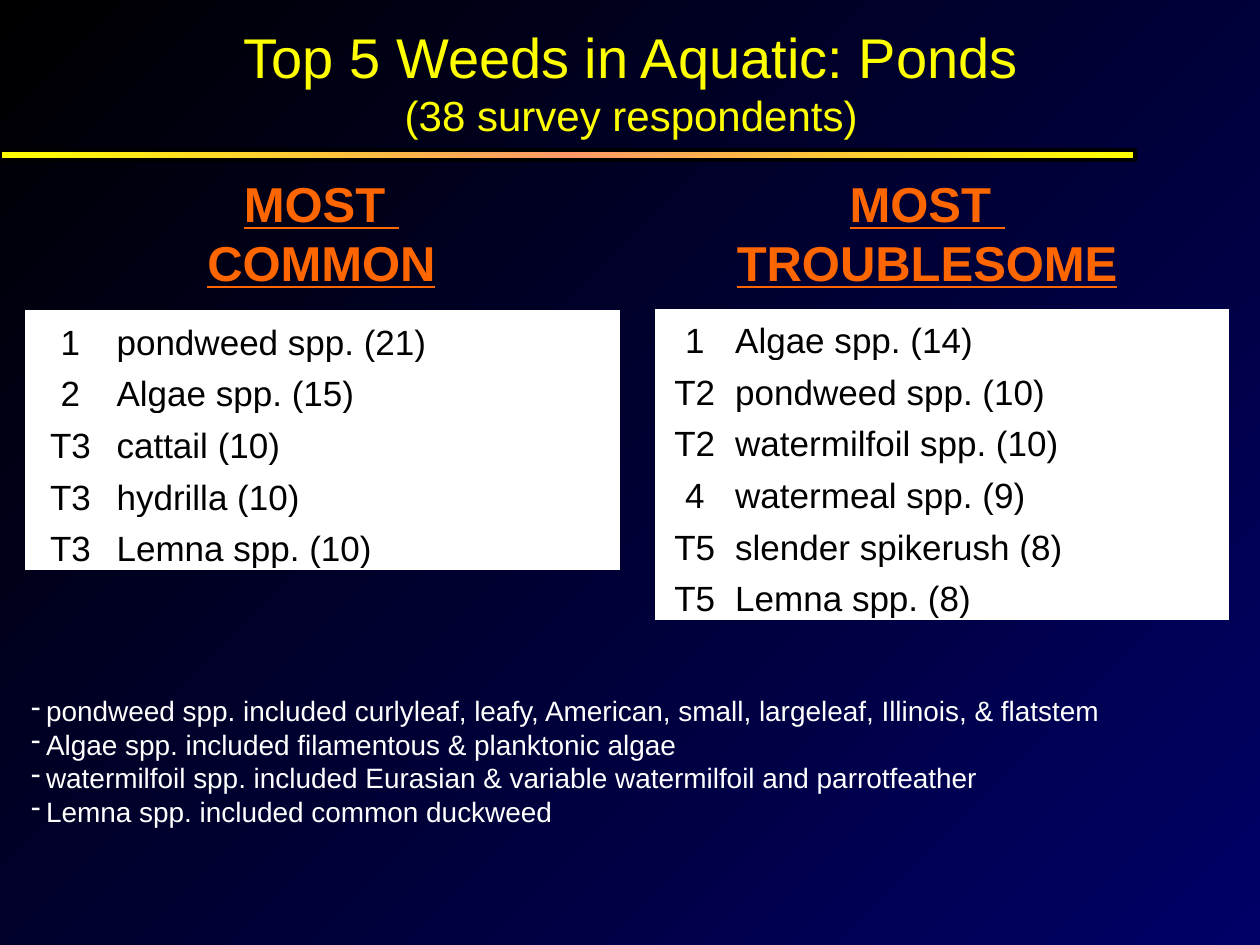
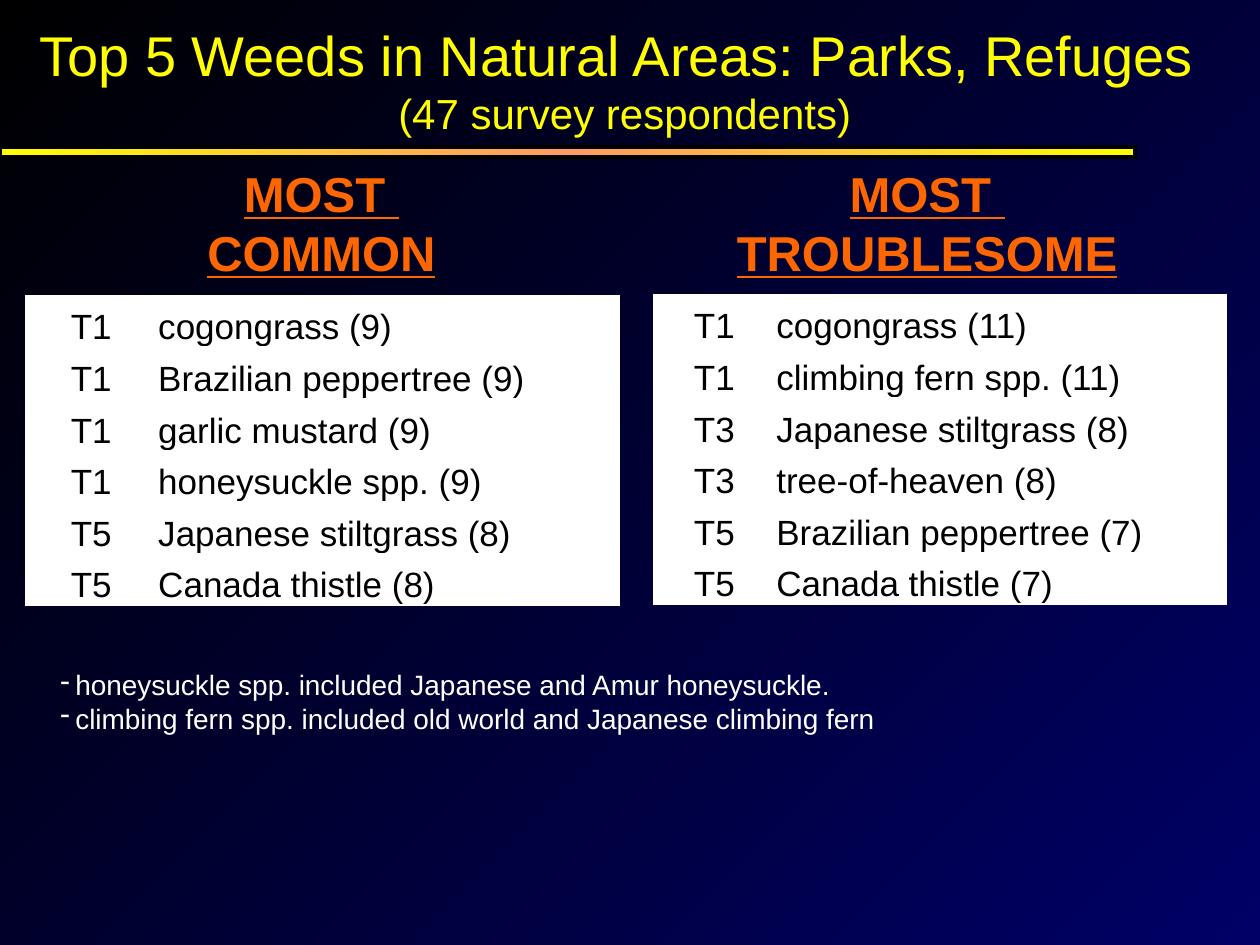
from copy import deepcopy
from lxml.etree import SubElement as Sub
from pptx import Presentation
from pptx.dml.color import RGBColor as RGB
from pptx.enum.shapes import MSO_SHAPE as SHAPE
from pptx.enum.text import MSO_ANCHOR as ANCHOR, PP_ALIGN as ALIGN
from pptx.oxml.ns import qn
from pptx.util import Cm, Pt

INK = {"night": "000000", "navy": "000066", "title": "FFFF00", "glow": "FF9966",
       "head": "FF6600", "paper": "FFFFFF", "text": "000000"}
FONT = "Arial"
ROW = 1.04


def tint(name):
    return RGB.from_string(INK[name])


def style(para, size, color, bold=False, line=False):
    for run in para.runs:
        font = run.font
        font.name, font.size = FONT, Pt(size)
        font.color.rgb = tint(color)
        font.bold, font.underline = bold, line


def blend(fill, node, angle, names):
    """Spread the named colours evenly along a linear gradient."""
    fill.gradient()
    fill.gradient_angle = angle
    stops = node.find(".//" + qn("a:gsLst"))
    while len(stops) < len(names):
        stops.append(deepcopy(stops[0]))
    for i, (stop, name) in enumerate(zip(fill.gradient_stops, names)):
        stop.color.rgb = tint(name)
        stop.position = i / (len(names) - 1)


def write(slide, box, lines, wrap=True):
    frame = slide.shapes.add_textbox(*map(Cm, box)).text_frame
    frame.word_wrap = wrap
    frame.text = "\n".join(lines)
    return frame


def add_title(slide, box, lines):
    frame = write(slide, box, lines)
    frame.vertical_anchor = ANCHOR.MIDDLE
    for para, size in zip(frame.paragraphs, (32, 24)):
        para.alignment = ALIGN.CENTER
        style(para, size, "title")


def add_band(slide, top):
    band = slide.shapes.add_shape(SHAPE.RECTANGLE, 0, Cm(top), Cm(22.89), Cm(0.2))
    band.shadow.inherit = False
    blend(band.fill, band.element, 0, ("title", "glow", "title"))
    band.line.color.rgb = tint("night")
    band.line.width = Pt(2.25)


def add_head(slide, box, word, wrap):
    for para in write(slide, box, ("MOST ", word), wrap).paragraphs:
        para.alignment = ALIGN.CENTER
        style(para, 28, "head", bold=True, line=True)


def edge(cell):
    props = cell._tc.get_or_add_tcPr()
    for side in "LRTB":
        line = Sub(props, qn("a:ln" + side), w=str(Pt(1)))
        Sub(Sub(line, qn("a:solidFill")), qn("a:srgbClr"), val=INK["paper"])


def add_ranks(slide, left, top, widths, rows):
    grid = slide.shapes.add_table(len(rows), 2, Cm(left), Cm(top),
                                  Cm(sum(widths)), Cm(ROW * len(rows))).table
    grid.first_row = grid.horz_banding = False
    for col, width in zip(grid.columns, widths):
        col.width = Cm(width)
    for r, row in enumerate(rows):
        for c, word in enumerate(row):
            cell = grid.cell(r, c)
            edge(cell)
            cell.fill.solid()
            cell.fill.fore_color.rgb = tint("paper")
            cell.margin_left = cell.margin_right = cell.margin_top = Cm(0.03)
            cell.margin_bottom = 0
            cell.vertical_anchor = ANCHOR.BOTTOM
            cell.text = word
            para = cell.text_frame.paragraphs[0]
            para.alignment = ALIGN.LEFT if c else ALIGN.CENTER
            style(para, 20, "text")


def add_notes(slide, box, lines):
    for para in write(slide, box, lines).paragraphs:
        style(para, 16, "paper")
        props = para._p.get_or_add_pPr()
        props.set("marL", str(Cm(0.3)))
        props.set("indent", str(-Cm(0.3)))
        Sub(props, qn("a:buChar"), char="-")


def add_page(deck, page):
    slide = deck.slides.add_slide(deck.slide_layouts[6])
    blend(slide.background.fill, slide.element, 315, ("night", "navy"))
    add_title(slide, *page["title"])
    add_band(slide, page["band"])
    # Column headings
    top, high = page["head"]
    add_head(slide, (3.43, top, 6.1, high), "COMMON", True)
    add_head(slide, (14.55, top, 8.28, high), "TROUBLESOME", False)
    # Ranked lists and remarks
    for ranks in page["ranks"]:
        add_ranks(slide, *ranks)
    add_notes(slide, *page["notes"])


PAGES = [
    {"title": ((-0.1, 0.08, 25.65, 3.1),
               ("Top 5 Weeds in Aquatic: Ponds", "(38 survey respondents)")),
     "band": 3.02, "head": (3.38, 2.64),
     "ranks": [
         (0.52, 6.27, (1.8, 10.16),
          [("1", "pondweed spp. (21)"), ("2", "Algae spp. (15)"),
           ("T3", "cattail (10)"), ("T3", "hydrilla (10)"),
           ("T3", "Lemna spp. (10)")]),
         (13.22, 6.24, (1.57, 9.96),
          [("1", "Algae spp. (14)"), ("T2", "pondweed spp. (10)"),
           ("T2", "watermilfoil spp. (10)"), ("4", "watermeal spp. (9)"),
           ("T5", "slender spikerush (8)"), ("T5", "Lemna spp. (8)")])],
     "notes": ((0.38, 13.86, 24.66, 3.7),
               ("pondweed spp. included curlyleaf, leafy, American, small, "
                "largeleaf, Illinois, & flatstem",
                "Algae spp. included filamentous & planktonic algae",
                "watermilfoil spp. included Eurasian & variable watermilfoil "
                "and parrotfeather",
                "Lemna spp. included common duckweed"))},
    {"title": ((0.43, 0, 24.33, 3.18),
               ("Top 5 Weeds in Natural Areas: Parks, Refuges ",
                "(47 survey respondents)")),
     "band": 2.97, "head": (3.18, 2.41),
     "ranks": [
         (0.52, 5.96, (2.64, 9.32),
          [("T1", "cogongrass (9)"), ("T1", "Brazilian peppertree (9)"),
           ("T1", "garlic mustard (9)"), ("T1", "honeysuckle spp. (9)"),
           ("T5", "Japanese stiltgrass (8)"), ("T5", "Canada thistle (8)")]),
         (13.18, 5.94, (2.44, 9.09),
          [("T1", "cogongrass (11)"), ("T1", "climbing fern spp. (11)"),
           ("T3", "Japanese stiltgrass (8)"), ("T3", "tree-of-heaven (8)"),
           ("T5", "Brazilian peppertree (7)"), ("T5", "Canada thistle (7)")])],
     "notes": ((0.97, 13.34, 23.5, 1.63),
               ("honeysuckle spp. included Japanese and Amur honeysuckle.",
                "climbing fern spp. included old world and Japanese "
                "climbing fern"))},
]


def main():
    deck = Presentation()
    deck.slide_width, deck.slide_height = Cm(25.4), Cm(19.05)
    for page in PAGES:
        add_page(deck, page)
    deck.save("out.pptx")


if __name__ == "__main__":
    main()
